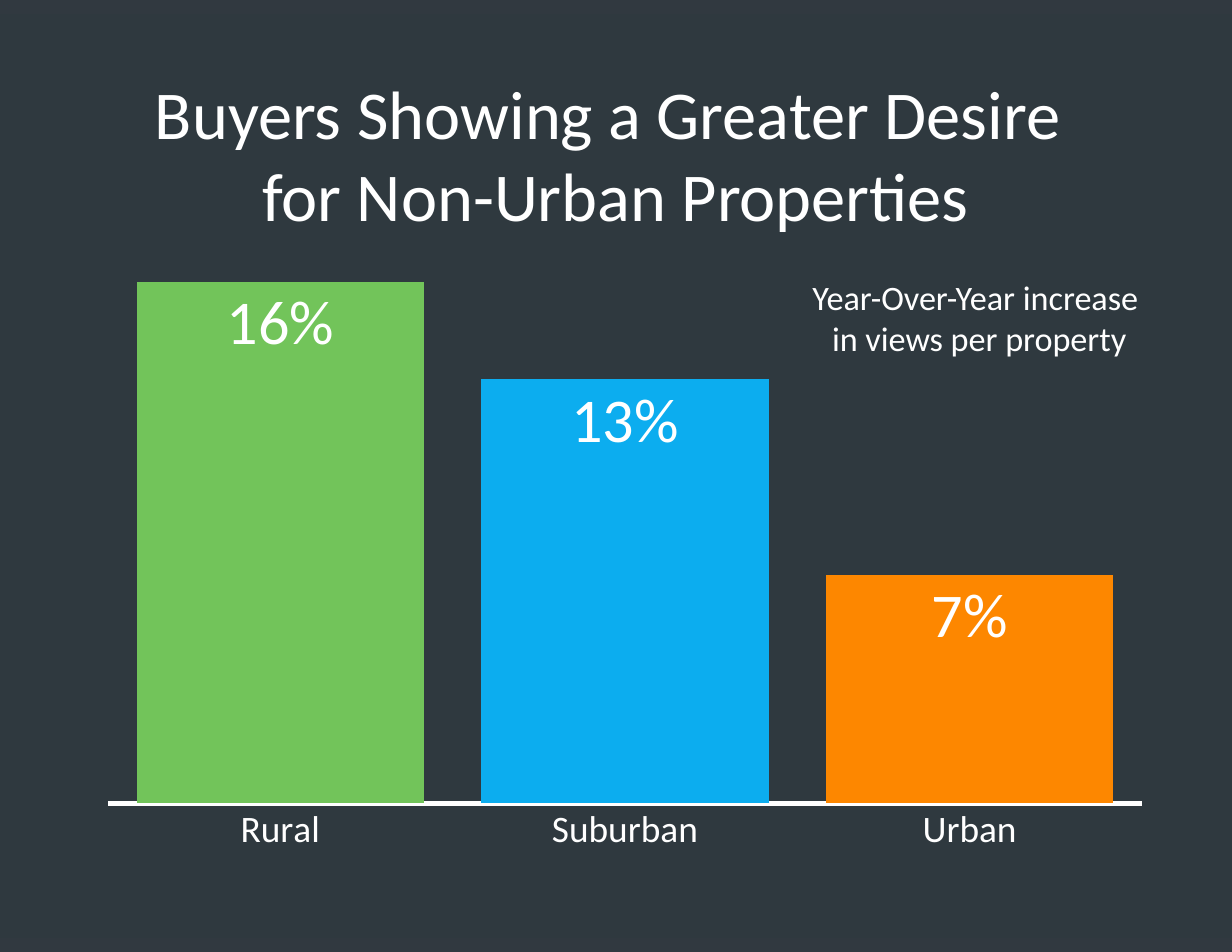
import pptx
import pptx.chart.data
import pptx.dml.color
import pptx.enum.chart
import pptx.enum.shapes
import pptx.enum.text
import pptx.oxml
import pptx.oxml.ns
import pptx.util

Pt = pptx.util.Pt
RGB = pptx.dml.color.RGBColor

BACK = RGB(0x31, 0x39, 0x40)
PANEL = RGB(0x2F, 0x39, 0x3F)
WHITE = RGB(0xFF, 0xFF, 0xFF)
GREEN = RGB(0x72, 0xC4, 0x5A)
BLUE = RGB(0x0C, 0xAD, 0xEF)
ORANGE = RGB(0xFD, 0x87, 0x00)
FACE = "Calibri"
WIDE, HIGH = 792, 612

# Area name, rise in views, bar colour
AREAS = [("Rural", 0.16, GREEN), ("Suburban", 0.13, BLUE), ("Urban", 0.07, ORANGE)]


def style(font, size, color=WHITE):
    font.name = FACE
    font.size = Pt(size)
    font.color.rgb = color


def write(shape, lines, *, box, size, wrap=True):
    """Place a text shape and fill it with centred lines."""
    shape.left, shape.top, shape.width, shape.height = map(Pt, box)
    frame = shape.text_frame
    frame.word_wrap = wrap
    frame.auto_size = pptx.enum.text.MSO_AUTO_SIZE.SHAPE_TO_FIT_TEXT
    frame.vertical_anchor = pptx.enum.text.MSO_ANCHOR.TOP
    frame.text = "\n".join(lines)
    for para in frame.paragraphs:
        para.alignment = pptx.enum.text.PP_ALIGN.CENTER
        style(para.runs[0].font, size)


def add_panel(slide):
    kind = pptx.enum.shapes.MSO_SHAPE.RECTANGLE
    panel = slide.shapes.add_shape(kind, 0, Pt(9), Pt(WIDE), Pt(594))
    panel.shadow.inherit = False
    panel.fill.solid()
    panel.fill.fore_color.rgb = PANEL
    panel.line.fill.background()
    # Send it behind the title
    slide.shapes.title.element.addprevious(panel.element)


def fix_plot(chart, left, top, width, height):
    """Pin the inner plot area, in fractions of the chart."""
    area = chart.element.chart.plotArea
    for old in area.findall(pptx.oxml.ns.qn("c:layout")):
        area.remove(old)
    area.insert(0, pptx.oxml.parse_xml(
        f'<c:layout {pptx.oxml.ns.nsdecls("c")}><c:manualLayout>'
        '<c:layoutTarget val="inner"/><c:xMode val="edge"/><c:yMode val="edge"/>'
        f'<c:x val="{left}"/><c:y val="{top}"/><c:w val="{width}"/><c:h val="{height}"/>'
        '</c:manualLayout></c:layout>'))


def add_bars(slide):
    data = pptx.chart.data.CategoryChartData(number_format="0%")
    data.categories = [name for name, _, _ in AREAS]
    data.add_series("Series 1", [rise for _, rise, _ in AREAS])
    kind = pptx.enum.chart.XL_CHART_TYPE.COLUMN_CLUSTERED
    chart = slide.shapes.add_chart(
        kind, Pt(55.5), Pt(130.5), Pt(692.5), Pt(429), data).chart
    style(chart.font, 10)
    chart.has_legend = False
    chart.has_title = False
    fix_plot(chart, 0.02, 0.02, 0.96, 0.88)

    # Axes: only the base line and area names show
    none = pptx.enum.chart.XL_TICK_MARK.NONE
    base = chart.category_axis
    base.major_tick_mark = base.minor_tick_mark = none
    base.format.line.color.rgb = WHITE
    base.format.line.width = Pt(3)
    style(base.tick_labels.font, 24)
    scale = chart.value_axis
    scale.minimum_scale, scale.maximum_scale = 0, 0.18
    scale.has_major_gridlines = False
    scale.visible = False

    # Bars and their values
    plot = chart.plots[0]
    plot.gap_width, plot.overlap = 20, -27
    plot.vary_by_categories = False
    for spot, (_, _, color) in enumerate(AREAS):
        fill = plot.series[0].points[spot].format.fill
        fill.solid()
        fill.fore_color.rgb = color
    tags = plot.series[0].data_labels
    tags.show_value = True
    tags.number_format, tags.number_format_is_linked = "0%", False
    tags.position = pptx.enum.chart.XL_LABEL_POSITION.INSIDE_END
    style(tags.font, 40)


def main():
    deck = pptx.Presentation()
    deck.slide_width, deck.slide_height = Pt(WIDE), Pt(HIGH)
    slide = deck.slides.add_slide(deck.slide_layouts[5])
    slide.background.fill.solid()
    slide.background.fill.fore_color.rgb = BACK

    add_panel(slide)
    add_bars(slide)
    # Note beside the bars, then the title
    note = slide.shapes.add_textbox(0, 0, 0, 0)
    write(note, ["Year-Over-Year increase ", "in views per property"],
          box=(512.5, 174, 234, 60.5), size=22, wrap=False)
    write(slide.shapes.title,
          ["Buyers Showing a Greater Desire ", "for Non-Urban Properties"],
          box=(0, 42, WIDE, 114), size=44)
    deck.save("out.pptx")


if __name__ == "__main__":
    main()
